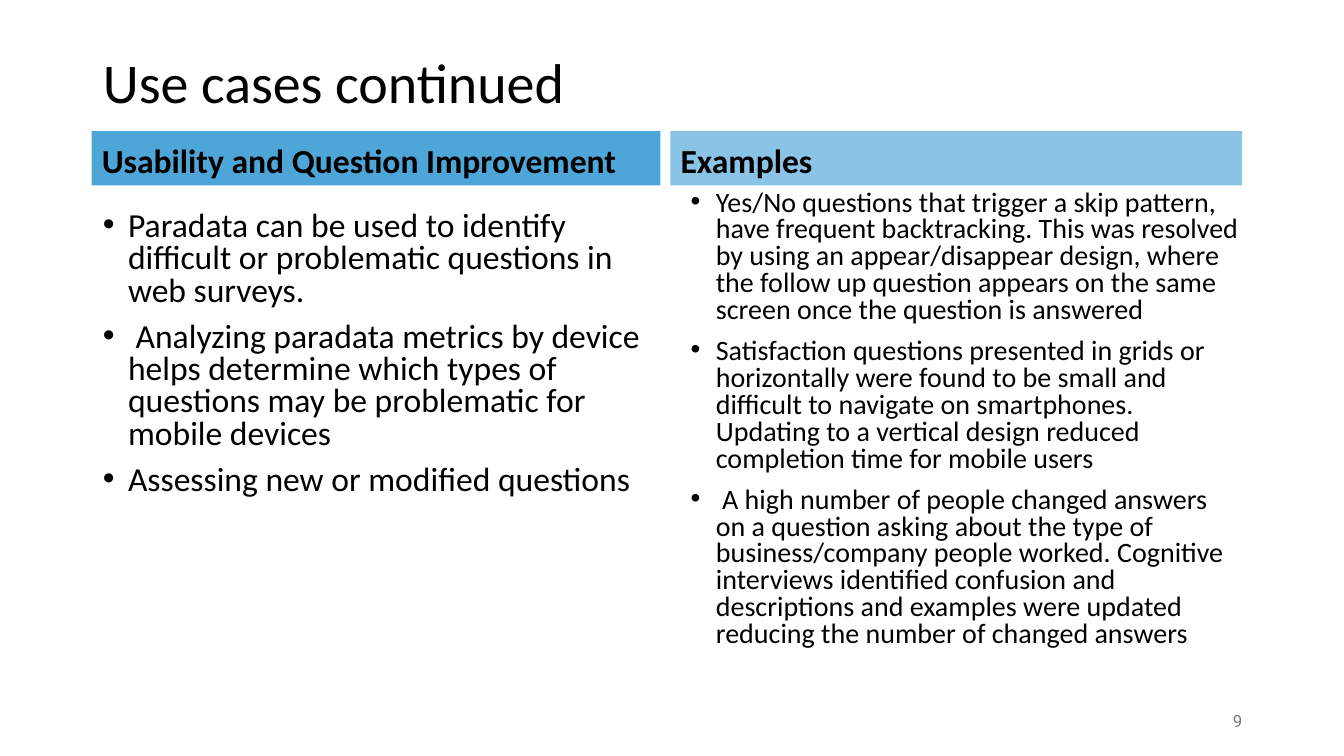
from dataclasses import dataclass

import pptx
import pptx.dml.color
import pptx.enum.text
import pptx.oxml.ns
import pptx.shapes.base
import pptx.slide
import pptx.text.text
import pptx.util
from lxml import etree
from pptx.util import Inches

BLACK = pptx.dml.color.RGBColor(0x00, 0x00, 0x00)
GREY = pptx.dml.color.RGBColor(0x79, 0x79, 0x79)
BLUE = pptx.dml.color.RGBColor(0x4E, 0xA5, 0xD8)
LIGHT_BLUE = pptx.dml.color.RGBColor(0x89, 0xC3, 0xE5)
WHITE = pptx.dml.color.RGBColor(0xFF, 0xFF, 0xFF)

ANCHOR = pptx.enum.text.MSO_ANCHOR
ALIGN = pptx.enum.text.PP_ALIGN
COMPARISON_LAYOUT = 4
HEADING_TOP, HEADING_HEIGHT = 1.3, 0.54
LIST_BOTTOM = 6.77


@dataclass(frozen=True)
class Column:
    heading: str
    fill: pptx.dml.color.RGBColor
    heading_left: float
    list_left: float
    list_top: float
    width: float
    font_size: int
    items: tuple[str, ...]
    heading_index: int
    list_index: int


COLUMNS = (
    Column(
        "Usability and Question Improvement", BLUE, 0.91, 0.92, 2.05, 5.64, 24,
        (
            "Paradata can be used to identify difficult or problematic questions in web surveys.",
            " Analyzing paradata metrics by device helps determine which types of questions "
            "may be problematic for mobile devices",
            "Assessing new or modified questions",
        ),
        heading_index=1, list_index=2,
    ),
    Column(
        "Examples", LIGHT_BLUE, 6.65, 6.75, 1.84, 5.67, 20,
        (
            "Yes/No questions that trigger a skip pattern, have frequent backtracking. "
            "This was resolved by using an appear/disappear design, where the follow up "
            "question appears on the same screen once the question is answered",
            "Satisfaction questions presented in grids or horizontally were found to be small "
            "and difficult to navigate on smartphones. Updating to a vertical design reduced "
            "completion time for mobile users",
            " A high number of people changed answers on a question asking about the type of "
            "business/company people worked. Cognitive interviews identified confusion and "
            "descriptions and examples were updated reducing the number of changed answers",
        ),
        heading_index=3, list_index=4,
    ),
)


def place(shape: pptx.shapes.base.BaseShape, left: float, top: float,
          width: float, height: float) -> None:
    shape.left, shape.top = Inches(left), Inches(top)
    shape.width, shape.height = Inches(width), Inches(height)


def add_bullet(paragraph: pptx.text.text._Paragraph) -> None:
    properties = paragraph._p.get_or_add_pPr()
    properties.set("marL", str(int(Inches(0.25))))
    properties.set("indent", str(int(Inches(-0.25))))
    bullet = etree.SubElement(properties, pptx.oxml.ns.qn("a:buChar"))
    bullet.set("char", "•")


def write(shape: pptx.shapes.base.BaseShape, text: str, size: int, anchor: ANCHOR,
          bold: bool = False, bullets: bool = False, line_spacing: float = 0.9,
          color: pptx.dml.color.RGBColor = BLACK, font_name: str = "Calibri",
          alignment: ALIGN = ALIGN.LEFT) -> None:
    """Fill a shape with one paragraph per line of text and format the runs."""
    frame = shape.text_frame
    frame.text = text
    frame.word_wrap = True
    frame.auto_size = pptx.enum.text.MSO_AUTO_SIZE.NONE
    frame.vertical_anchor = anchor
    for number, paragraph in enumerate(frame.paragraphs):
        if bullets:
            add_bullet(paragraph)
        paragraph.alignment = alignment
        paragraph.line_spacing = line_spacing
        paragraph.space_before = pptx.util.Pt(10 if number else 0)
        for run in paragraph.runs:
            run.font.name = font_name
            run.font.size = pptx.util.Pt(size)
            run.font.bold = bold
            run.font.color.rgb = color


def add_column(slide: pptx.slide.Slide, column: Column) -> None:
    placeholders = {shape.placeholder_format.idx: shape for shape in slide.placeholders}

    heading = placeholders[column.heading_index]
    place(heading, column.heading_left, HEADING_TOP, column.width, HEADING_HEIGHT)
    heading.fill.solid()
    heading.fill.fore_color.rgb = column.fill
    write(heading, column.heading, 24, ANCHOR.BOTTOM, bold=True)

    body = placeholders[column.list_index]
    place(body, column.list_left, column.list_top, column.width,
          LIST_BOTTOM - column.list_top)
    write(body, "\n".join(column.items), column.font_size, ANCHOR.TOP,
          bullets=True, line_spacing=0.8)


def main() -> None:
    presentation = pptx.Presentation()
    presentation.slide_width = Inches(13.33)
    presentation.slide_height = Inches(7.5)
    slide = presentation.slides.add_slide(presentation.slide_layouts[COMPARISON_LAYOUT])
    slide.background.fill.solid()
    slide.background.fill.fore_color.rgb = WHITE

    title = slide.shapes.title
    place(title, 0.92, 0.4, 11.5, 0.9)
    write(title, "Use cases continued", 40, ANCHOR.MIDDLE)

    for column in COLUMNS:
        add_column(slide, column)

    page_number = slide.shapes.add_textbox(Inches(9.42), Inches(6.95), Inches(3), Inches(0.4))
    write(page_number, "9", 12, ANCHOR.MIDDLE, line_spacing=1.0, color=GREY,
          font_name="Roboto", alignment=ALIGN.RIGHT)

    presentation.save("out.pptx")


if __name__ == "__main__":
    main()
